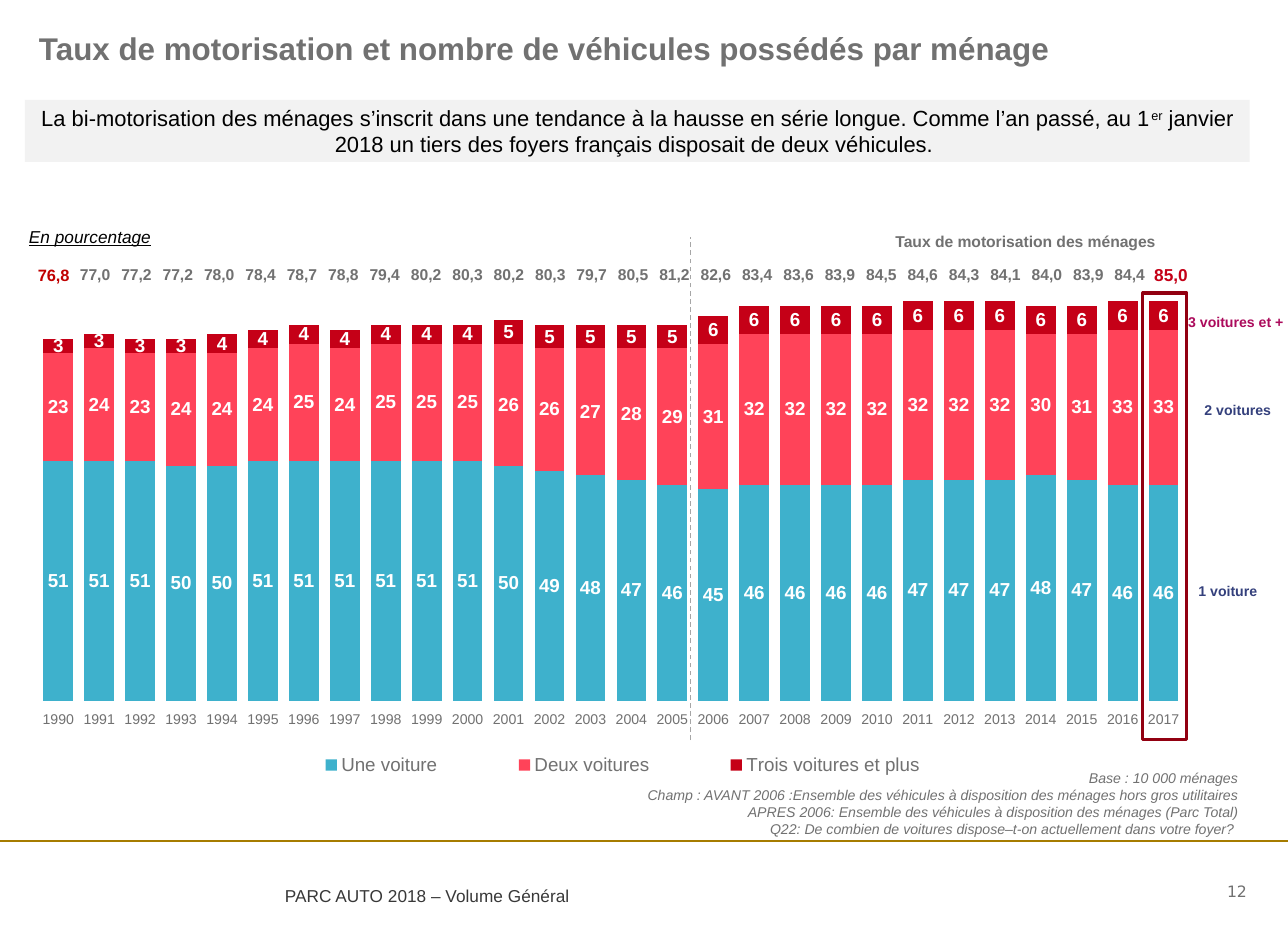
from lxml import etree
from pptx import Presentation
from pptx import util as u
from pptx.chart.data import CategoryChartData
from pptx.dml.color import RGBColor
from pptx.enum import chart as charts, dml, shapes, text
from pptx.oxml import ns

SCALE = 914400 / 112.8
COLORS = {
    "grey": "717171", "ink": "383838", "black": "000000", "white": "FFFFFF",
    "band": "F2F2F2", "gold": "A67C00", "dash": "A6A6A6", "frame": "920011",
    "one": "3EB1CC", "two": "FF4359", "three": "C50017", "first": "C00000",
    "navy": "34407C", "plum": "AC0B5C",
}
ALIGN = {"left": text.PP_ALIGN.LEFT, "center": text.PP_ALIGN.CENTER,
         "right": text.PP_ALIGN.RIGHT, "justify": text.PP_ALIGN.JUSTIFY}

YEARS = range(1990, 2018)
SERIES = {
    "Une voiture": ("one", [51, 51, 51, 50, 50, 51, 51, 51, 51, 51, 51, 50, 49, 48,
                            47, 46, 45, 46, 46, 46, 46, 47, 47, 47, 48, 47, 46, 46]),
    "Deux voitures": ("two", [23, 24, 23, 24, 24, 24, 25, 24, 25, 25, 25, 26, 26, 27,
                              28, 29, 31, 32, 32, 32, 32, 32, 32, 32, 30, 31, 33, 33]),
    "Trois voitures et plus": ("three", [3] * 4 + [4] * 7 + [5] * 5 + [6] * 12),
}
RATES = ("76,8 77,0 77,2 77,2 78,0 78,4 78,7 78,8 79,4 80,2 80,3 80,2 80,3 79,7 "
         "80,5 81,2 82,6 83,4 83,6 83,9 84,5 84,6 84,3 84,1 84,0 83,9 84,4 85,0").split()


def px(length):
    return u.Emu(round(length * SCALE))


def rgb(name):
    return RGBColor.from_string(COLORS[name])


def place(parent, index, **fractions):
    """Give a chart part a manual layout."""
    for old in parent.findall(ns.qn("c:layout")):
        parent.remove(old)
    layout = etree.Element(ns.qn("c:layout"))
    manual = etree.SubElement(layout, ns.qn("c:manualLayout"))
    for tag, value in fractions.items():
        etree.SubElement(manual, ns.qn("c:" + tag)).set("val", str(value))
    parent.insert(index, layout)


class Page:
    def __init__(self, deck, font="Arial"):
        self.slide = deck.slides.add_slide(deck.slide_layouts[6])
        self.items = self.slide.shapes
        self.font = font

    def style(self, font, size, color, bold=False, italic=False, underline=False, face=None):
        font.name, font.size = face or self.font, u.Pt(size)
        font.bold, font.italic, font.underline = bold, italic, underline
        font.color.rgb = rgb(color)

    def fill_text(self, frame, lines, size, color, align="left", **look):
        """Fill a frame; a line given as a list alternates normal and superscript parts."""
        for i, line in enumerate(lines):
            para = frame.add_paragraph() if i else frame.paragraphs[0]
            para.alignment = ALIGN[align]
            for j, part in enumerate([line] if isinstance(line, str) else line):
                span = para.add_run()
                span.text = part
                self.style(span.font, size, color, **look)
                if j % 2:
                    span._r.get_or_add_rPr().set("baseline", "30000")

    def frame(self, box, insets, middle=False, wrap=True):
        frame = box.text_frame
        frame.word_wrap = wrap
        (frame.margin_left, frame.margin_top,
         frame.margin_right, frame.margin_bottom) = map(px, insets)
        frame.vertical_anchor = text.MSO_ANCHOR.MIDDLE if middle else text.MSO_ANCHOR.TOP
        return frame

    def text(self, at, lines, size, color, insets=(0, 0, 0, 0), middle=False, wrap=True, **look):
        box = self.items.add_textbox(*map(px, at))
        self.fill_text(self.frame(box, insets, middle, wrap), lines, size, color, **look)

    def rect(self, at, fill=None, line=None, width=1):
        box = self.items.add_shape(shapes.MSO_SHAPE.RECTANGLE, *map(px, at))
        box.shadow.inherit = False
        if fill:
            box.fill.solid()
            box.fill.fore_color.rgb = rgb(fill)
        else:
            box.fill.background()
        if line:
            box.line.color.rgb, box.line.width = rgb(line), u.Pt(width)
        else:
            box.line.fill.background()
        return box

    def line(self, ends, color, width, dash=None):
        rule = self.items.add_connector(shapes.MSO_CONNECTOR.STRAIGHT, *map(px, ends))
        rule.line.color.rgb, rule.line.width = rgb(color), u.Pt(width)
        if dash:
            rule.line.dash_style = dash
        etree.SubElement(rule._element.spPr, ns.qn("a:effectLst"))

    def row(self, at, values, looks):
        """One-row table of equal columns; looks gives size and colour by index."""
        table = self.items.add_table(1, len(values), *map(px, at)).table
        table.first_row = table.horz_banding = False
        for i, value in enumerate(values):
            table.columns[i].width = px(at[2] / len(values))
            cell = table.cell(0, i)
            cell.fill.background()
            cell.vertical_anchor = text.MSO_ANCHOR.MIDDLE
            cell.margin_left = cell.margin_right = cell.margin_top = px(1)
            cell.margin_bottom = 0
            size, color = looks.get(i, (10, "grey"))
            self.fill_text(cell.text_frame, [value], size, color, align="center", bold=True)

    def stacked_columns(self, at, categories, series):
        data = CategoryChartData(number_format="0")
        data.categories = [str(category) for category in categories]
        for name, (_, values) in series.items():
            data.add_series(name, values)
        chart = self.items.add_chart(
            charts.XL_CHART_TYPE.COLUMN_STACKED, *map(px, at), data).chart
        self.style(chart.font, 12, "grey")
        chart.has_title = False
        plot = chart.plots[0]
        plot.gap_width, plot.overlap, plot.vary_by_categories = 38, 100, False
        for bars, (color, _) in zip(plot.series, series.values()):
            bars.format.fill.solid()
            bars.format.fill.fore_color.rgb = rgb(color)
            labels = bars.data_labels
            labels.show_value = True
            labels.number_format, labels.number_format_is_linked = "0", False
            labels.position = charts.XL_LABEL_POSITION.CENTER
            self.style(labels.font, 12, "white", bold=True)
        # Axes
        years, scale = chart.category_axis, chart.value_axis
        years.format.line.fill.background()
        self.style(years.tick_labels.font, 9, "grey")
        scale.minimum_scale, scale.maximum_scale, scale.major_unit = 0, 90, 10
        scale.has_major_gridlines = scale.visible = False
        # Legend and plot area
        chart.has_legend = True
        legend = chart.legend
        legend.position = charts.XL_LEGEND_POSITION.BOTTOM
        legend.include_in_layout = False
        self.style(legend.font, 12, "grey")
        place(legend._element, 1, xMode="edge", yMode="edge", x=0.19, y=0.91, w=0.63, h=0.06)
        place(chart._chartSpace.chart.plotArea, 0, layoutTarget="inner", xMode="edge",
              yMode="edge", x=0.01, y=0.03, w=0.97, h=0.79)


def main():
    deck = Presentation()
    deck.slide_width, deck.slide_height = u.Inches(11.42), u.Inches(8.27)
    page = Page(deck)

    # Footer
    page.line((0, 841, 1288, 841), "gold", 1.5)
    page.text((285, 885, 363, 27), ["PARC AUTO 2018 – Volume Général"], 11, "ink")
    page.text((1157, 880, 90, 23), ["12"], 10, "grey", middle=True, align="right",
              face="DejaVu Sans")

    # Chart
    page.stacked_columns((26, 262, 1182, 535), YEARS, SERIES)

    # Title and key message
    page.text((39, 0, 1208, 68),
              ["Taux de motorisation et nombre de véhicules possédés par ménage"],
              20, "grey", insets=(0, 29, 0, 0), bold=True)
    message = page.rect((25, 100, 1225, 62), fill="band")
    page.fill_text(page.frame(message, (10, 5, 10, 5), middle=True), [[
        "La bi-motorisation des ménages s’inscrit dans une tendance à la hausse en série "
        "longue. Comme l’an passé, au 1", "er",
        " janvier 2018 un tiers des foyers français disposait de deux véhicules. "]],
        14, "black", align="center")

    # Survey notes
    page.text((457, 764, 791, 79), [
        "Base : 10 000 ménages",
        "Champ : AVANT 2006 :Ensemble des véhicules à disposition des ménages hors gros utilitaires",
        "APRES 2006: Ensemble des véhicules à disposition des ménages (Parc Total)",
        "Q22: De combien de voitures dispose–t-on actuellement dans votre foyer? ",
    ], 9, "grey", insets=(10, 5, 10, 5), align="right", italic=True)

    # Ownership rates above the columns
    page.text((29, 226, 211, 21), ["En pourcentage"], 11, "black", align="justify",
              italic=True, underline=True)
    page.text((882, 226, 287, 30), ["Taux de motorisation des ménages"], 10, "grey",
              insets=(11, 6, 11, 6), wrap=False, align="center", bold=True)
    page.row((33, 258, 1160, 34), RATES,
             {0: (10.5, "first"), len(RATES) - 1: (11, "three")})

    # Labels beside the last column
    for left, top, width, label, color in (
            (1180, 576, 96, "1 voiture", "navy"),
            (1188, 395, 100, "2 voitures", "navy"),
            (1184, 307, 104, "3 voitures et +", "plum")):
        page.text((left, top, width, 28), [label], 9, color, insets=(0, 6, 0, 6),
                  wrap=False, align="center", bold=True)

    # Highlight of 2017 and break in the series
    page.rect((1143, 293, 44, 446), line="frame", width=2)
    page.line((691, 740, 691, 237), "dash", 0.75, dml.MSO_LINE.DASH)

    deck.save("out.pptx")


if __name__ == "__main__":
    main()
